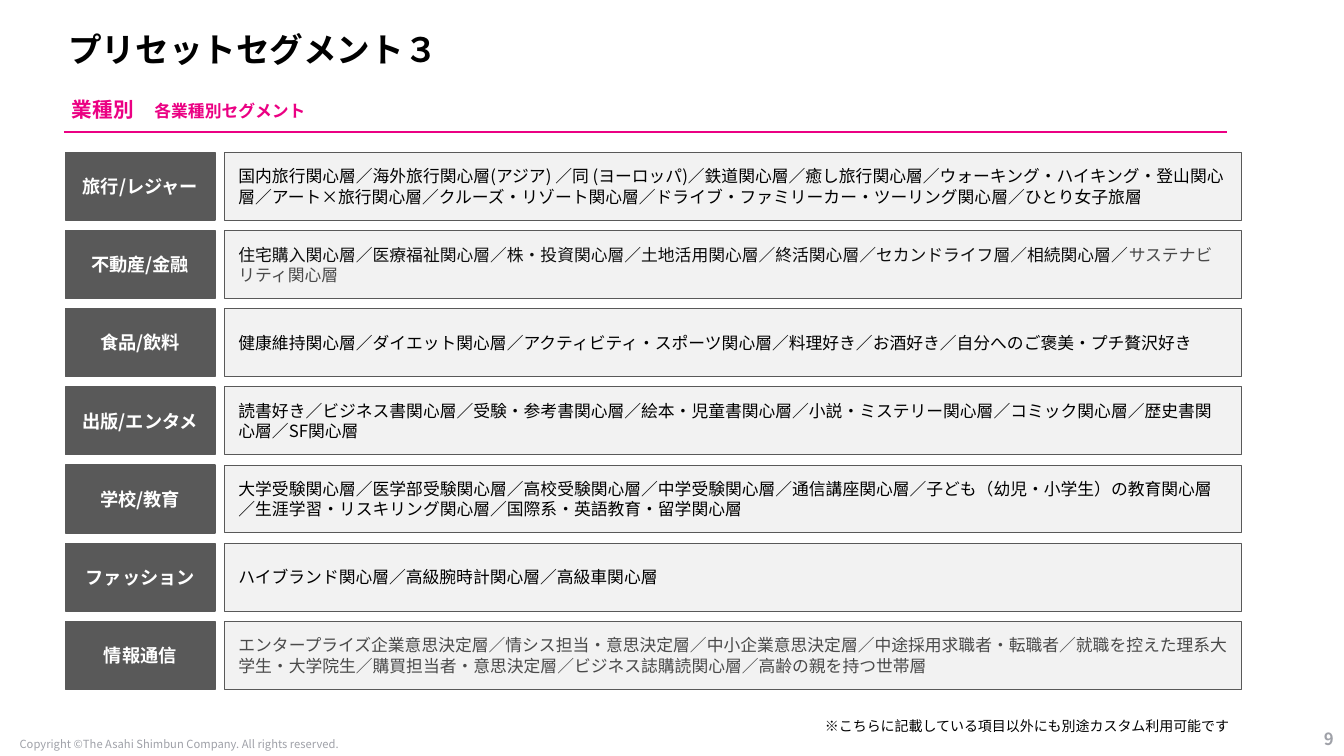
from dataclasses import dataclass

from lxml import etree
from pptx import Presentation
from pptx.dml.color import RGBColor
from pptx.enum.shapes import MSO_CONNECTOR, MSO_SHAPE
from pptx.enum.text import MSO_ANCHOR, PP_ALIGN
from pptx.oxml.ns import qn
from pptx.util import Cm, Pt

LEFT, CENTER, RIGHT = PP_ALIGN.LEFT, PP_ALIGN.CENTER, PP_ALIGN.RIGHT
TOP, MIDDLE = MSO_ANCHOR.TOP, MSO_ANCHOR.MIDDLE
RECTANGLE = MSO_SHAPE.RECTANGLE
STRAIGHT = MSO_CONNECTOR.STRAIGHT


@dataclass(frozen=True)
class Theme:
    font: str = "Noto Sans CJK JP"
    black: str = "000000"
    ink: str = "0D0D0D"
    soft: str = "4A4A4A"
    dark: str = "595959"
    pale: str = "F2F2F2"
    white: str = "FFFFFF"
    muted: str = "9FA1A8"
    accent: str = "EB0083"
    title_size: float = 24
    heading_size: float = 14.7
    label_size: float = 13
    body_size: float = 12
    note_size: float = 10
    legal_size: float = 8


THEME = Theme()
TEXT_INSETS = (0.25, 0.13)
WIDE_INSETS = (0.34, 0.34)
LABEL_INSETS = (0.1, 0.34)

ROW_TOP, ROW_STEP, ROW_HEIGHT = 3.84, 1.97, 1.71
LABEL_LEFT, LABEL_WIDTH = 1.65, 3.77
BODY_LEFT, BODY_WIDTH = 5.67, 25.63

SEGMENTS = [
    ("旅行/レジャー", [(
        "国内旅行関心層／海外旅行関心層(アジア) ／同 (ヨーロッパ)／鉄道関心層／癒し旅行関心層／"
        "ウォーキング・ハイキング・登山関心層／アート×旅行関心層／クルーズ・リゾート関心層／"
        "ドライブ・ファミリーカー・ツーリング関心層／ひとり女子旅層", THEME.black)]),
    ("不動産/金融", [
        ("住宅購入関心層／医療福祉関心層／株・投資関心層／土地活用関心層／終活関心層／"
         "セカンドライフ層／相続関心層／", THEME.ink),
        ("サステナビリティ関心層", THEME.soft)]),
    ("食品/飲料", [(
        "健康維持関心層／ダイエット関心層／アクティビティ・スポーツ関心層／料理好き／お酒好き／"
        "自分へのご褒美・プチ贅沢好き", THEME.black)]),
    ("出版/エンタメ", [(
        "読書好き／ビジネス書関心層／受験・参考書関心層／絵本・児童書関心層／"
        "小説・ミステリー関心層／コミック関心層／歴史書関心層／SF関心層", THEME.black)]),
    ("学校/教育", [(
        "大学受験関心層／医学部受験関心層／高校受験関心層／中学受験関心層／通信講座関心層／"
        "子ども（幼児・小学生）の教育関心層／生涯学習・リスキリング関心層／"
        "国際系・英語教育・留学関心層", THEME.black)]),
    ("ファッション", [(
        "ハイブランド関心層／高級腕時計関心層／高級車関心層", THEME.black)]),
    ("情報通信", [(
        "エンタープライズ企業意思決定層／情シス担当・意思決定層／中小企業意思決定層／"
        "中途採用求職者・転職者／就職を控えた理系大学生・大学院生／購買担当者・意思決定層／"
        "ビジネス誌購読関心層／高齢の親を持つ世帯層", THEME.soft)]),
]


class SlideBuilder:
    def __init__(self, page, theme):
        self.page = page
        self.theme = theme

    def fill_text(self, box, spans, align, anchor, insets, wrap=True, spacing=None):
        frame = box.text_frame
        frame.word_wrap = wrap
        frame.vertical_anchor = anchor
        frame.margin_left = frame.margin_right = Cm(insets[0])
        frame.margin_top = frame.margin_bottom = Cm(insets[1])
        para = frame.paragraphs[0]
        para.alignment = align
        if spacing:
            para.line_spacing = spacing
        for text, size, color, bold in spans:
            span = para.add_run()
            span.text = text
            span.font.size = Pt(size)
            span.font.bold = bold
            span.font.color.rgb = RGBColor.from_string(color)
            span.font.name = self.theme.font
            east_asian = etree.SubElement(span._r.get_or_add_rPr(), qn("a:ea"))
            east_asian.set("typeface", self.theme.font)

    def text(self, area, spans, align=LEFT, anchor=MIDDLE, insets=TEXT_INSETS,
             wrap=True, spacing=None):
        box = self.page.shapes.add_textbox(*map(Cm, area))
        self.fill_text(box, spans, align, anchor, insets, wrap, spacing)

    def panel(self, area, fill, line_width, spans, align, insets):
        box = self.page.shapes.add_shape(RECTANGLE, *map(Cm, area))
        box.shadow.inherit = False
        box.fill.solid()
        box.fill.fore_color.rgb = RGBColor.from_string(fill)
        box.line.color.rgb = RGBColor.from_string(self.theme.dark)
        box.line.width = Pt(line_width)
        self.fill_text(box, spans, align, MIDDLE, insets)

    def rule(self, left, right, top):
        line = self.page.shapes.add_connector(
            STRAIGHT, Cm(left), Cm(top), Cm(right), Cm(top))
        line.line.color.rgb = RGBColor.from_string(self.theme.accent)
        line.line.width = Pt(1.5)
        etree.SubElement(line._element.spPr, qn("a:effectLst"))

    def segment(self, index, label, parts):
        theme = self.theme
        top = ROW_TOP + index * ROW_STEP
        self.panel((LABEL_LEFT, top, LABEL_WIDTH, ROW_HEIGHT), theme.dark, 1,
                   [(label, theme.label_size, theme.white, True)],
                   CENTER, LABEL_INSETS)
        self.panel((BODY_LEFT, top, BODY_WIDTH, ROW_HEIGHT), theme.pale, 0.75,
                   [(text, theme.body_size, color, False) for text, color in parts],
                   LEFT, WIDE_INSETS)


def main():
    deck = Presentation()
    deck.slide_width, deck.slide_height = Cm(33.87), Cm(19.05)
    page = deck.slides.add_slide(deck.slide_layouts[6])
    builder = SlideBuilder(page, THEME)

    builder.text((0.23, 18.54, 8.59, 0.43),
                 [("Copyright ©The Asahi Shimbun Company. All rights reserved.",
                   THEME.legal_size, THEME.muted, False)],
                 align=CENTER, wrap=False)
    builder.text((31.88, 18.21, 1.98, 0.84),
                 [("9", THEME.body_size, THEME.muted, True)], align=RIGHT)
    builder.text((1.47, 0.71, 25.3, 1.19),
                 [("プリセットセグメント３", THEME.title_size, THEME.black, True)],
                 spacing=0.9)
    builder.text((1.47, 2.13, 29, 1.98),
                 [("業種別　", THEME.heading_size, THEME.accent, True),
                  ("各業種別セグメント", THEME.body_size, THEME.accent, True)],
                 anchor=TOP, insets=WIDE_INSETS)
    builder.rule(1.61, 30.92, 3.33)
    for index, (label, parts) in enumerate(SEGMENTS):
        builder.segment(index, label, parts)
    builder.text((20.45, 17.88, 11.46, 1.12),
                 [("※こちらに記載している項目以外にも別途カスタム利用可能です",
                   THEME.note_size, THEME.black, False)],
                 anchor=TOP, insets=WIDE_INSETS)
    deck.save("out.pptx")


if __name__ == "__main__":
    main()
